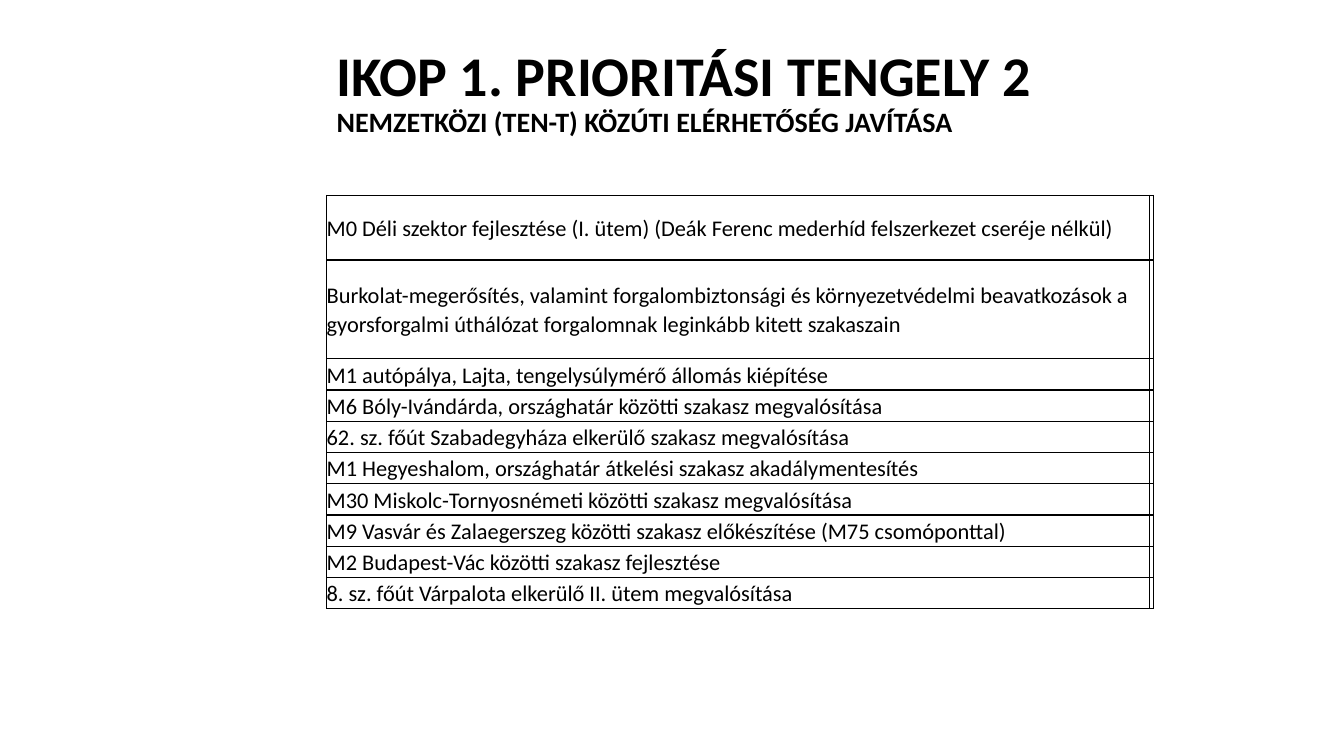
from lxml.etree import SubElement
from pptx import Presentation
from pptx.dml.color import RGBColor
from pptx.enum.text import MSO_ANCHOR, PP_ALIGN
from pptx.oxml.ns import qn
from pptx.util import Inches, Pt

BLACK = RGBColor(0x00, 0x00, 0x00)
WHITE = RGBColor(0xFF, 0xFF, 0xFF)
FONT = "Calibri"

TITLE = "IKOP 1. PRIORITÁSI TENGELY 2"
SUBTITLE = "NEMZETKÖZI (TEN-T) KÖZÚTI ELÉRHETŐSÉG JAVÍTÁSA"
LINE_HEIGHT = 0.31
PROJECTS = [
    ("M0 Déli szektor fejlesztése (I. ütem) (Deák Ferenc mederhíd felszerkezet cseréje nélkül)", 0.64),
    ("Burkolat-megerősítés, valamint forgalombiztonsági és környezetvédelmi beavatkozások a "
     "gyorsforgalmi úthálózat forgalomnak leginkább kitett szakaszain", 0.98),
    ("M1 autópálya, Lajta, tengelysúlymérő állomás kiépítése", LINE_HEIGHT),
    ("M6 Bóly-Ivándárda, országhatár közötti szakasz megvalósítása", LINE_HEIGHT),
    ("62. sz. főút Szabadegyháza elkerülő szakasz megvalósítása", LINE_HEIGHT),
    ("M1 Hegyeshalom, országhatár átkelési szakasz akadálymentesítés", LINE_HEIGHT),
    ("M30 Miskolc-Tornyosnémeti közötti szakasz megvalósítása", LINE_HEIGHT),
    ("M9 Vasvár és Zalaegerszeg közötti szakasz előkészítése (M75 csomóponttal)", LINE_HEIGHT),
    ("M2 Budapest-Vác közötti szakasz fejlesztése", LINE_HEIGHT),
    ("8. sz. főút Várpalota elkerülő II. ütem megvalósítása", LINE_HEIGHT),
]


def add_run(paragraph, text, size, bold=False):
    run = paragraph.add_run()
    run.text = text
    run.font.name = FONT
    run.font.size = Pt(size)
    run.font.bold = bold
    run.font.color.rgb = BLACK


def add_title(slide, left, top, width, height):
    box = slide.shapes.add_textbox(Inches(left), Inches(top), Inches(width), Inches(height))
    frame = box.text_frame
    frame.word_wrap = True
    frame.vertical_anchor = MSO_ANCHOR.MIDDLE
    paragraph = frame.paragraphs[0]
    paragraph.alignment = PP_ALIGN.LEFT
    paragraph.line_spacing = 0.9
    add_run(paragraph, TITLE, 40, bold=True)
    paragraph.add_line_break()
    add_run(paragraph, SUBTITLE, 20, bold=True)


def style_cell(cell):
    """Give the cell no margins, a thin black border and a white fill."""
    cell.margin_left = cell.margin_right = cell.margin_top = cell.margin_bottom = 0
    cell.vertical_anchor = MSO_ANCHOR.MIDDLE
    properties = cell._tc.get_or_add_tcPr()
    for side in ("lnL", "lnR", "lnT", "lnB"):
        line = SubElement(properties, qn(f"a:{side}"), w=str(Pt(1)))
        fill = SubElement(line, qn("a:solidFill"))
        SubElement(fill, qn("a:srgbClr"), val=str(BLACK))
    cell.fill.solid()
    cell.fill.fore_color.rgb = WHITE


def add_project_table(slide, left, top, width, height):
    edge_width = 0.04
    frame = slide.shapes.add_table(
        len(PROJECTS), 2, Inches(left), Inches(top), Inches(width), Inches(height))
    table = frame.table
    table.first_row = table.horz_banding = False
    table.columns[0].width = Inches(width - edge_width)
    table.columns[1].width = Inches(edge_width)
    for row, (project, row_height) in zip(table.rows, PROJECTS):
        row.height = Inches(row_height)
        for cell in row.cells:
            style_cell(cell)
        paragraph = row.cells[0].text_frame.paragraphs[0]
        paragraph.line_spacing = 1.07
        add_run(paragraph, project, 16)


def main():
    presentation = Presentation()
    presentation.slide_width = Inches(13.33)
    presentation.slide_height = Inches(7.5)
    slide = presentation.slides.add_slide(presentation.slide_layouts[6])
    left, width = 3.24, 8.2
    add_title(slide, left, 0.3, width, 1.25)
    add_project_table(slide, left, 1.94, width, sum(height for _, height in PROJECTS))
    presentation.save("out.pptx")


if __name__ == "__main__":
    main()
